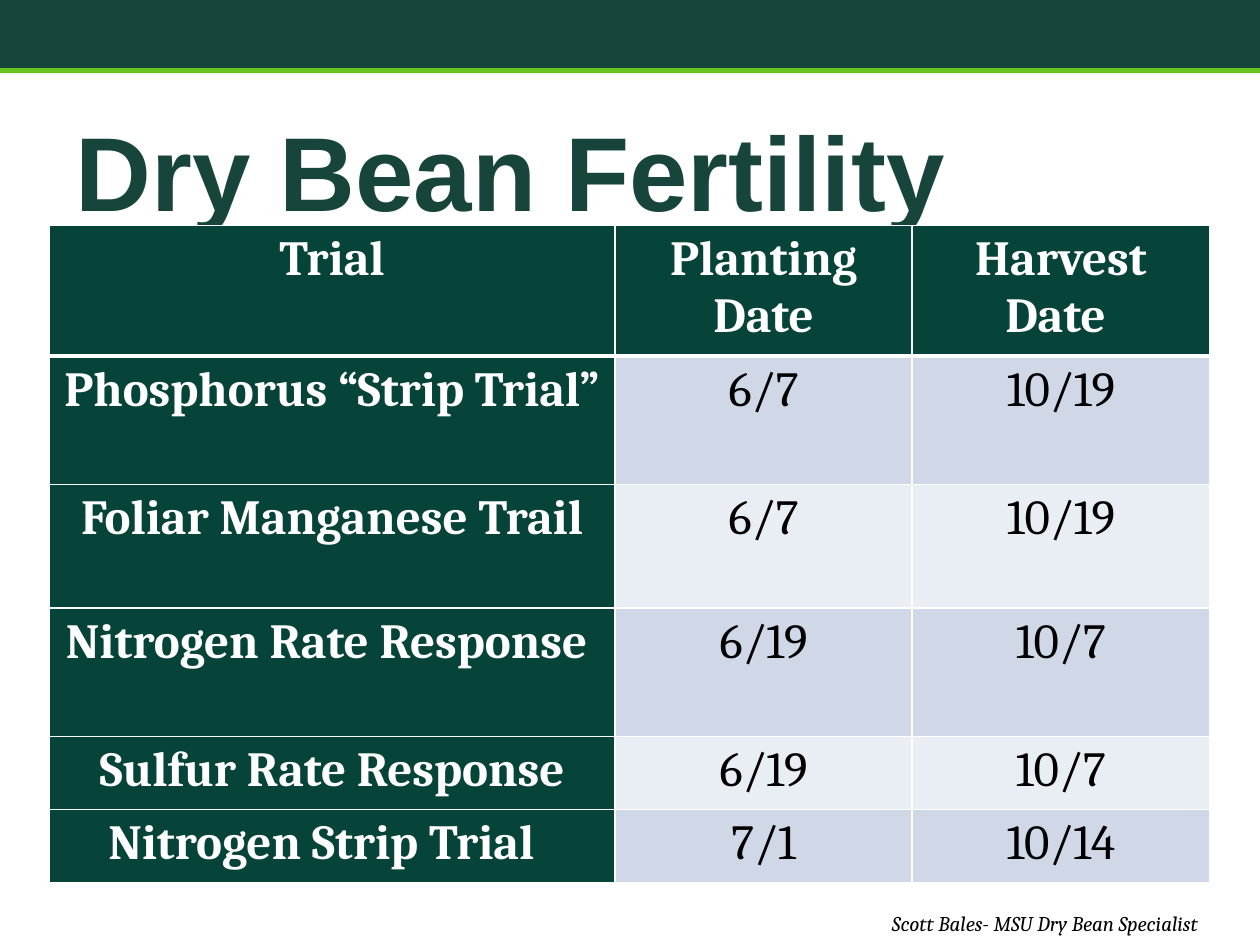
import dataclasses
import typing

import lxml.etree
import pptx
import pptx.dml.color
import pptx.enum.shapes
import pptx.enum.text
import pptx.oxml.ns
import pptx.util

Inches = pptx.util.Inches
COLORS = {
    "spartan": "18453B",
    "lime": "67C521",
    "header": "064339",
    "band_dark": "D0D8E8",
    "band_light": "E9EDF4",
    "white": "FFFFFF",
    "black": "000000",
}
CREDIT_FORMAT = {"name": "Cambria", "size": pptx.util.Pt(12), "italic": True}
TITLE_FORMAT = {"name": "Arial", "size": pptx.util.Pt(60), "bold": True}
LABEL_FORMAT = {"name": "Cambria", "size": pptx.util.Pt(28), "bold": True}
DATE_FORMAT = {**LABEL_FORMAT, "bold": False}


@dataclasses.dataclass
class Band:
    top: float
    height: float
    color: str


@dataclasses.dataclass
class Trial:
    name: str
    planting: str
    harvest: str
    height: float


BANDS = [Band(0.53, 0.05, "lime"), Band(0, 0.54, "spartan")]
TRIALS = [
    Trial("Trial", "Planting Date", "Harvest Date ", 1.02),
    Trial("Phosphorus “Strip Trial”", "6/7", "10/19", 1.02),
    Trial("Foliar Manganese Trail", "6/7", "10/19", 0.98),
    Trial("Nitrogen Rate Response ", "6/19", "10/7", 1.02),
    Trial("Sulfur Rate Response", "6/19", "10/7", 0.58),
    Trial("Nitrogen Strip Trial  ", "7/1", "10/14", 0.58),
]
COLUMN_WIDTHS = [4.49, 2.36, 2.36]


def rgb(color: str) -> pptx.dml.color.RGBColor:
    return pptx.dml.color.RGBColor.from_string(COLORS[color])


def apply_format(font: typing.Any, values: dict, color: str) -> None:
    for attribute, value in values.items():
        setattr(font, attribute, value)
    font.color.rgb = rgb(color)


def draw_band(slide: typing.Any, band: Band) -> None:
    bar = slide.shapes.add_shape(
        pptx.enum.shapes.MSO_SHAPE.RECTANGLE,
        0, Inches(band.top), Inches(10), Inches(band.height))
    bar.shadow.inherit = False
    bar.fill.solid()
    bar.fill.fore_color.rgb = rgb(band.color)
    bar.line.fill.background()


def draw_title(slide: typing.Any) -> None:
    title = slide.shapes.title
    title.left, title.top = Inches(0.5), Inches(0.87)
    title.width, title.height = Inches(9), Inches(0.53)
    frame = title.text_frame
    frame.text = "Dry Bean Fertility"
    frame.auto_size = pptx.enum.text.MSO_AUTO_SIZE.NONE
    frame.vertical_anchor = pptx.enum.text.MSO_ANCHOR.TOP
    frame.margin_top = Inches(0.13)
    heading = frame.paragraphs[0]
    heading.alignment = pptx.enum.text.PP_ALIGN.LEFT
    heading.line_spacing = 0.85
    apply_format(heading.runs[0].font, TITLE_FORMAT, "spartan")


def draw_credit(slide: typing.Any) -> None:
    credit = slide.shapes.add_textbox(
        Inches(6.98), Inches(7.18), Inches(3.02), Inches(0.3))
    credit.text_frame.word_wrap = True
    credit.text_frame.text = "Scott Bales- MSU Dry Bean Specialist"
    apply_format(credit.text_frame.paragraphs[0].runs[0].font, CREDIT_FORMAT, "black")


def add_border(cell: typing.Any, side: str, points: float) -> None:
    properties = cell._tc.get_or_add_tcPr()
    qn = pptx.oxml.ns.qn
    line = lxml.etree.SubElement(properties, qn(f"a:ln{side}"), w=str(pptx.util.Pt(points)))
    fill = lxml.etree.SubElement(line, qn("a:solidFill"))
    lxml.etree.SubElement(fill, qn("a:srgbClr"), val=COLORS["white"])


def format_cell(cell: typing.Any, text: str, row: int, column: int) -> None:
    is_label = row == 0 or column == 0
    band = "band_dark" if row % 2 else "band_light"
    widths = {"L": 1, "R": 1, "T": 3 if row == 1 else 1, "B": 3 if row == 0 else 1}
    for side, points in widths.items():
        add_border(cell, side, points)
    cell.fill.solid()
    cell.fill.fore_color.rgb = rgb("header" if is_label else band)
    cell.text = text
    paragraph = cell.text_frame.paragraphs[0]
    paragraph.alignment = pptx.enum.text.PP_ALIGN.CENTER
    apply_format(paragraph.runs[0].font,
                 LABEL_FORMAT if is_label else DATE_FORMAT,
                 "white" if is_label else "black")


def draw_trials(slide: typing.Any) -> None:
    table = slide.shapes.add_table(
        len(TRIALS), len(COLUMN_WIDTHS), Inches(0.39), Inches(1.79),
        Inches(sum(COLUMN_WIDTHS)), Inches(sum(trial.height for trial in TRIALS))).table
    for column, width in zip(table.columns, COLUMN_WIDTHS):
        column.width = Inches(width)
    for row, trial in enumerate(TRIALS):
        table.rows[row].height = Inches(trial.height)
        for column, text in enumerate((trial.name, trial.planting, trial.harvest)):
            format_cell(table.cell(row, column), text, row, column)


def main() -> None:
    deck = pptx.Presentation()
    deck.slide_width, deck.slide_height = Inches(10), Inches(7.5)
    slide = deck.slides.add_slide(deck.slide_layouts.get_by_name("Title Only"))
    for band in BANDS:
        draw_band(slide, band)
    draw_title(slide)
    draw_credit(slide)
    draw_trials(slide)
    deck.save("out.pptx")


if __name__ == "__main__":
    main()
